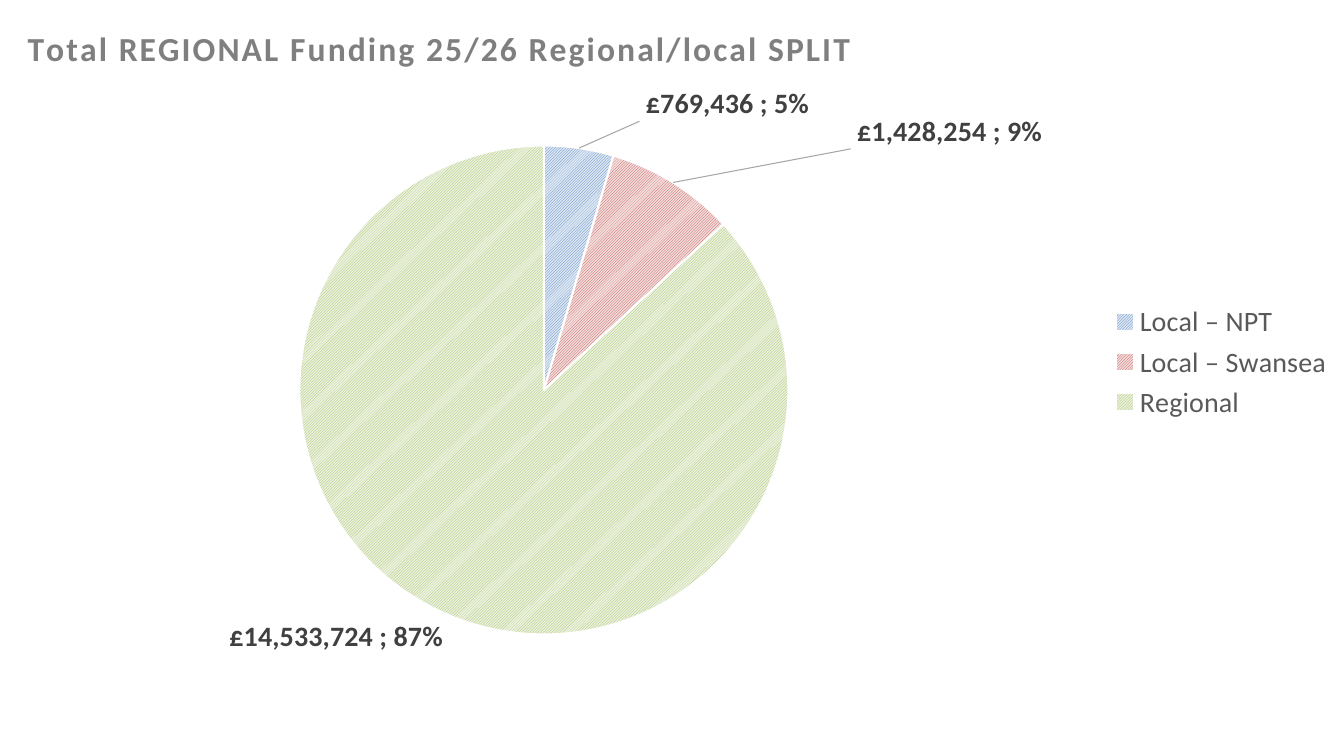
from copy import deepcopy

from lxml.etree import SubElement
from pptx import Presentation
from pptx.chart.data import CategoryChartData
from pptx.dml.color import RGBColor
from pptx.enum.chart import XL_CHART_TYPE, XL_LABEL_POSITION, XL_LEGEND_POSITION
from pptx.enum.dml import MSO_PATTERN
from pptx.oxml import parse_xml
from pptx.oxml.ns import nsdecls, qn
from pptx.util import Inches, Pt

SLICES = [
    ("Local – NPT", 769436, "4F81BD", "DCE6F2"),
    ("Local – Swansea", 1428254, "C0504D", "F2DCDB"),
    ("Regional", 14533724, "9BBB59", "EBF1DE"),
]
LABEL_OFFSET_PERCENTS = {0: (4.5, -3), 1: (13.2, -4.1)}


def color(value):
    return RGBColor.from_string(value)


class FundingSlide:
    font_name = "Calibri"

    def __init__(self, presentation):
        self.width = presentation.slide_width
        self.height = presentation.slide_height
        self.slide = presentation.slides.add_slide(presentation.slide_layouts[6])

    def style(self, font, size, value, bold=False):
        font.name = self.font_name
        font.size = Pt(size)
        font.bold = bold
        font.color.rgb = color(value)

    def place(self, parent, index, **shares):
        for layout in parent.findall(qn("c:layout")):
            parent.remove(layout)
        layout = parse_xml(f"<c:layout {nsdecls('c')}><c:manualLayout/></c:layout>")
        for name, value in shares.items():
            SubElement(layout[0], qn(f"c:{name}")).set("val", str(value))
        parent.insert(index, layout)

    def add_pie(self, left, top, width, height):
        data = CategoryChartData(number_format='_-"£"#,##0_-')
        data.categories = [name for name, *_ in SLICES]
        data.add_series("Series 1", [amount for _, amount, *_ in SLICES])
        frame = self.slide.shapes.add_chart(
            XL_CHART_TYPE.PIE,
            int(self.width * left),
            int(self.height * top),
            int(self.width * width),
            int(self.height * height),
            data,
        )
        chart = frame.chart
        self.style(chart.font, 10, "000000")
        plot = chart.plots[0]
        plot.vary_by_categories = True
        series = plot.series[0]
        for index, (_, _, stripe, ground) in enumerate(SLICES):
            point_format = series.points[index].format
            point_format.fill.patterned()
            point_format.fill.pattern = MSO_PATTERN.LIGHT_UPWARD_DIAGONAL
            point_format.fill.fore_color.rgb = color(stripe)
            point_format.fill.back_color.rgb = color(ground)
            point_format.line.color.rgb = color("FFFFFF")
            point_format.line.width = Pt(1.5)
        plot_area = chart.element.find(".//" + qn("c:plotArea"))
        self.place(
            plot_area, 0, layoutTarget="inner", xMode="edge", yMode="edge",
            x=0.21, y=0.19, w=0.37, h=0.7,
        )
        return chart

    def add_title(self, chart, text):
        frame = chart.chart_title.text_frame
        frame.text = text
        run = frame.paragraphs[0].runs[0]
        self.style(run.font, 24, "7F7F7F", True)
        run._r.get_or_add_rPr().set("spc", "150")
        title = chart.element.find(".//" + qn("c:title"))
        self.place(title, 1, xMode="edge", yMode="edge", x=0, y=0.01)

    def add_legend(self, chart):
        chart.has_legend = True
        chart.legend.position = XL_LEGEND_POSITION.RIGHT
        chart.legend.include_in_layout = False
        self.style(chart.legend.font, 20, "595959")

    def add_labels(self, chart):
        series = chart.plots[0].series[0]
        labels = series.data_labels
        labels.number_format = "0%"
        labels.number_format_is_linked = False
        labels.show_value = True
        labels.show_percentage = True
        labels.position = XL_LABEL_POSITION.OUTSIDE_END
        self.style(labels.font, 20, "404040", True)
        group = chart.element.find(".//" + qn("c:ser")).find(qn("c:dLbls"))
        for leader in group.findall(qn("c:showLeaderLines")):
            group.remove(leader)
        SubElement(group, qn("c:separator")).text = "; "
        shared = deepcopy(list(group))
        group.find(".//" + qn("a:bodyPr")).set("wrap", "square")
        SubElement(group, qn("c:showLeaderLines")).set("val", "1")
        group.append(parse_xml(
            f"<c:leaderLines {nsdecls('c', 'a')}><c:spPr><a:ln w='9525'><a:solidFill>"
            "<a:srgbClr val='A6A6A6'/></a:solidFill></a:ln></c:spPr></c:leaderLines>"
        ))
        for position, (index, (x, y)) in enumerate(LABEL_OFFSET_PERCENTS.items()):
            label = parse_xml(f"<c:dLbl {nsdecls('c')}><c:idx val='{index}'/></c:dLbl>")
            label.extend(deepcopy(shared))
            self.place(label, 1, x=x / 100, y=y / 100)
            group.insert(position, label)


def main():
    presentation = Presentation()
    presentation.slide_width = Inches(13.33)
    presentation.slide_height = Inches(7.5)
    funding = FundingSlide(presentation)
    chart = funding.add_pie(0.016, 0.017, 0.984, 0.924)
    funding.add_title(chart, "Total REGIONAL Funding 25/26 Regional/local SPLIT")
    funding.add_legend(chart)
    funding.add_labels(chart)
    presentation.save("out.pptx")


if __name__ == "__main__":
    main()
